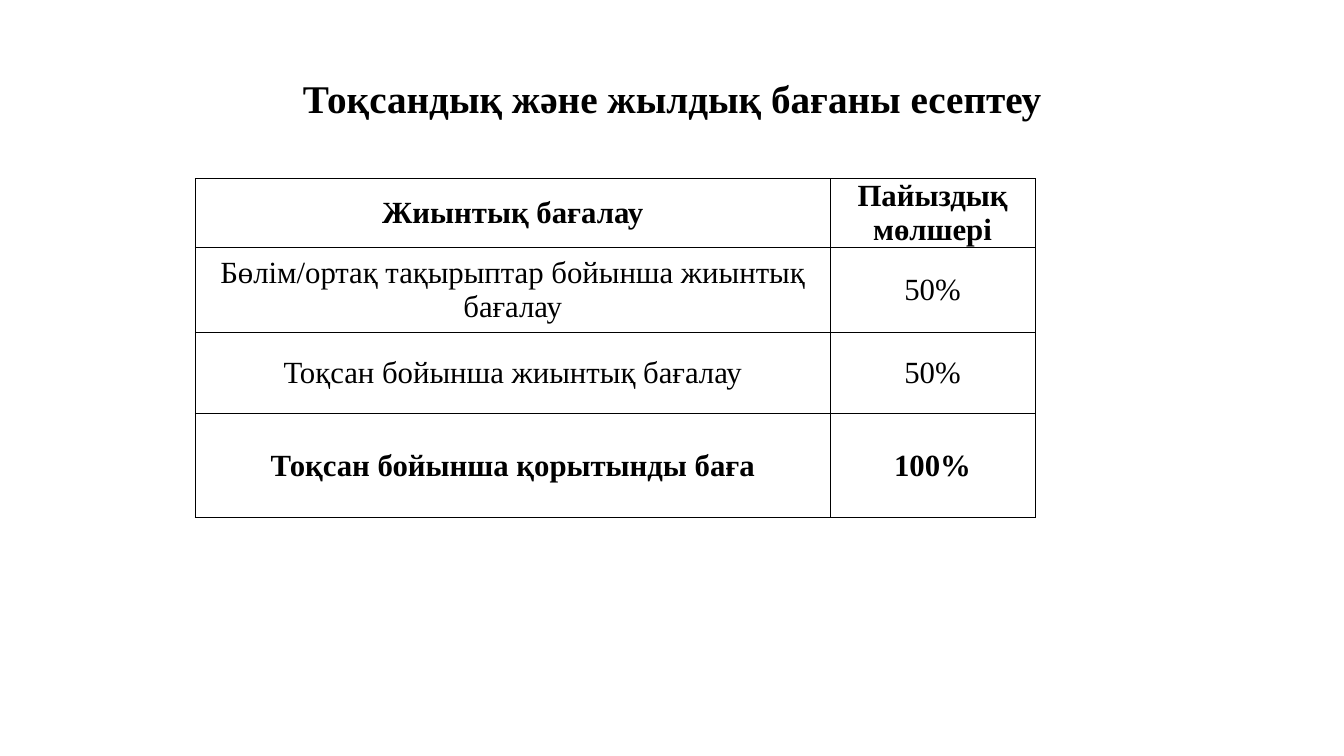
from lxml import etree
from pptx import Presentation
from pptx.dml.color import RGBColor
from pptx.enum import text as t
from pptx.oxml.ns import qn
from pptx.util import Cm, Pt

INK, PAPER = "000000", "FFFFFF"


def write(frame, words, size, bold):
    """Fill a frame with one centred run."""
    par = frame.paragraphs[0]
    par.alignment = t.PP_ALIGN.CENTER
    run = par.add_run()
    run.text = words
    run.font.name = "Times New Roman"
    run.font.size = Pt(size)
    run.font.bold = bold
    run.font.color.rgb = RGBColor.from_string(INK)
    return par


def border(cell):
    props = cell._tc.get_or_add_tcPr()
    for spot, side in enumerate(("lnL", "lnR", "lnT", "lnB")):
        line = etree.Element(qn("a:" + side), w=str(Pt(0.5)))
        fill = etree.SubElement(line, qn("a:solidFill"))
        etree.SubElement(fill, qn("a:srgbClr"), val=INK)
        props.insert(spot, line)


deck = Presentation()
deck.slide_width, deck.slide_height = Cm(33.87), Cm(19.05)
slide = deck.slides.add_slide(deck.slide_layouts[5])

title = slide.shapes.title
title.left, title.top = Cm(2.33), Cm(0.71)
title.width, title.height = Cm(29.21), Cm(3.68)
title.text_frame.word_wrap = True
title.text_frame.vertical_anchor = t.MSO_ANCHOR.MIDDLE
head = write(title.text_frame, "Тоқсандық және жылдық бағаны есептеу", 28, True)
head.line_spacing = 0.9

rows = [
    ("Жиынтық бағалау", "Пайыздық мөлшері", True),
    ("Бөлім/ортақ тақырыптар бойынша жиынтық бағалау", "50%", False),
    ("Тоқсан бойынша жиынтық бағалау", "50%", False),
    ("Тоқсан бойынша қорытынды баға", "100%", True),
]
widths = [16.0, 5.16]
heights = [1.74, 2.14, 2.04, 2.62]

grid = slide.shapes.add_table(len(rows), len(widths), Cm(4.92), Cm(4.5),
                              Cm(sum(widths)), Cm(sum(heights))).table
grid.first_row = grid.horz_banding = False
for col, width in zip(grid.columns, widths):
    col.width = Cm(width)

for row, height, (*words, bold) in zip(grid.rows, heights, rows):
    row.height = Cm(height)
    for cell, word in zip(row.cells, words):
        cell.fill.solid()
        cell.fill.fore_color.rgb = RGBColor.from_string(PAPER)
        cell.vertical_anchor = t.MSO_ANCHOR.MIDDLE
        cell.margin_left = cell.margin_right = cell.margin_top = Cm(0.02)
        cell.margin_bottom = 0
        border(cell)
        write(cell.text_frame, word, 22, bold)

deck.save("out.pptx")
